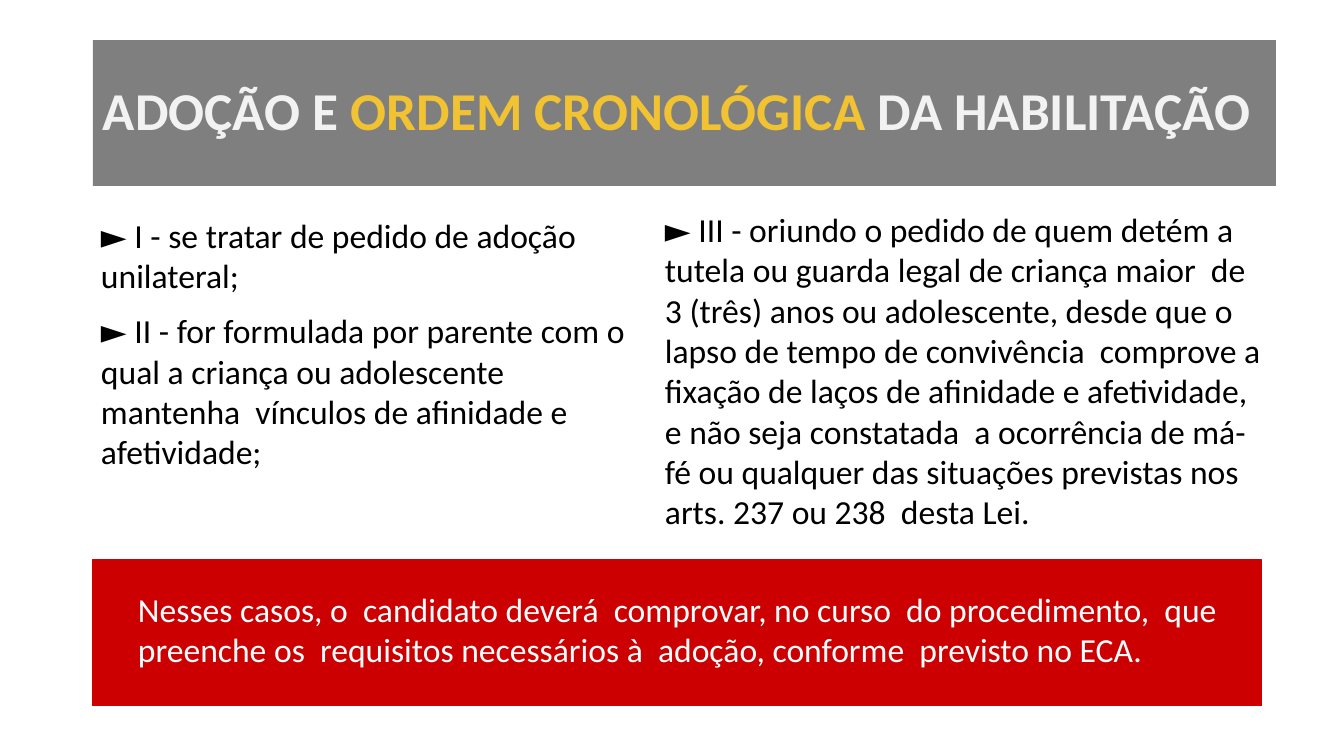
from pptx import Presentation
from pptx.dml.color import RGBColor
from pptx.enum.shapes import MSO_SHAPE
from pptx.enum.text import MSO_ANCHOR, PP_ALIGN
from pptx.util import Pt

BLACK = RGBColor(0x00, 0x00, 0x00)
WHITE = RGBColor(0xFF, 0xFF, 0xFF)
PALE = RGBColor(0xF2, 0xF2, 0xF2)
GOLD = RGBColor(0xF1, 0xC2, 0x32)
GRAY = RGBColor(0x7F, 0x7F, 0x7F)
RED = RGBColor(0xCC, 0x00, 0x00)

TITLE = [[
    ("ADOÇÃO E ", PALE),
    ("ORDEM CRONOLÓGICA", GOLD),
    (" DA HABILITAÇÃO", PALE),
]]
FAMILY_CASES = [
    [("► I - se tratar de pedido de adoção unilateral;", BLACK)],
    [("► II - for formulada por parente com o qual a criança ou adolescente "
      "mantenha  vínculos de afinidade e afetividade;", BLACK)],
]
GUARDIAN_CASE = [[
    ("► III - oriundo o pedido de quem detém a tutela ou guarda legal de "
     "criança maior  de 3 (três) anos ou adolescente, desde que o lapso de "
     "tempo de convivência  comprove a fixação de laços de afinidade e "
     "afetividade, e não seja constatada  a ocorrência de má-fé ou qualquer "
     "das situações previstas nos arts. 237 ou 238  desta Lei.", BLACK),
]]
REQUIREMENT = [[
    ("Nesses casos, o  candidato deverá  comprovar, no curso  do "
     "procedimento,  que preenche os  requisitos necessários à  adoção, "
     "conforme  previsto no ECA.", WHITE),
]]

TITLE_BOX = (93, 40, 1183, 146)
FAMILY_BOX = (91, 210, 545, 314)
GUARDIAN_BOX = (655, 199, 621, 346)
BANNER_BOX = (93, 560, 1169, 146)
REQUIREMENT_BOX = (128, 579, 1106, 102)

EMU_PER_PX = 914400 / 100.8


def px(length):
    return round(length * EMU_PER_PX)


def add_bar(slide, box, color):
    shape = slide.shapes.add_shape(MSO_SHAPE.RECTANGLE, *map(px, box))
    shape.shadow.inherit = False
    shape.fill.solid()
    shape.fill.fore_color.rgb = color
    shape.line.fill.background()
    return shape


def write(shape, paragraphs, size=24, bold=False, line_spacing=1.0,
          space_before=10.5, inset=10, anchor=MSO_ANCHOR.TOP):
    frame = shape.text_frame
    frame.word_wrap = True
    frame.vertical_anchor = anchor
    frame.margin_left = frame.margin_right = px(10)
    frame.margin_top = frame.margin_bottom = px(inset)
    for index, runs in enumerate(paragraphs):
        paragraph = frame.add_paragraph() if index else frame.paragraphs[0]
        paragraph.alignment = PP_ALIGN.LEFT
        paragraph.line_spacing = line_spacing
        paragraph.space_before = Pt(space_before)
        for text, color in runs:
            run = paragraph.add_run()
            run.text = text
            run.font.name = "Calibri"
            run.font.size = Pt(size)
            run.font.bold = bold
            run.font.color.rgb = color


def main():
    presentation = Presentation()
    presentation.slide_width = px(1344)
    presentation.slide_height = px(756)
    slide = presentation.slides.add_slide(presentation.slide_layouts[6])

    title = add_bar(slide, TITLE_BOX, GRAY)
    write(title, TITLE, size=38, bold=True, line_spacing=0.9,
          space_before=0, inset=5, anchor=MSO_ANCHOR.MIDDLE)

    banner = add_bar(slide, BANNER_BOX, RED)
    banner.line.color.rgb = RED
    banner.line.width = Pt(0.75)

    for box, paragraphs, inset in (
        (FAMILY_BOX, FAMILY_CASES, 5),
        (GUARDIAN_BOX, GUARDIAN_CASE, 10),
        (REQUIREMENT_BOX, REQUIREMENT, 10),
    ):
        text_box = slide.shapes.add_textbox(*map(px, box))
        write(text_box, paragraphs, inset=inset)

    presentation.save("out.pptx")


if __name__ == "__main__":
    main()
